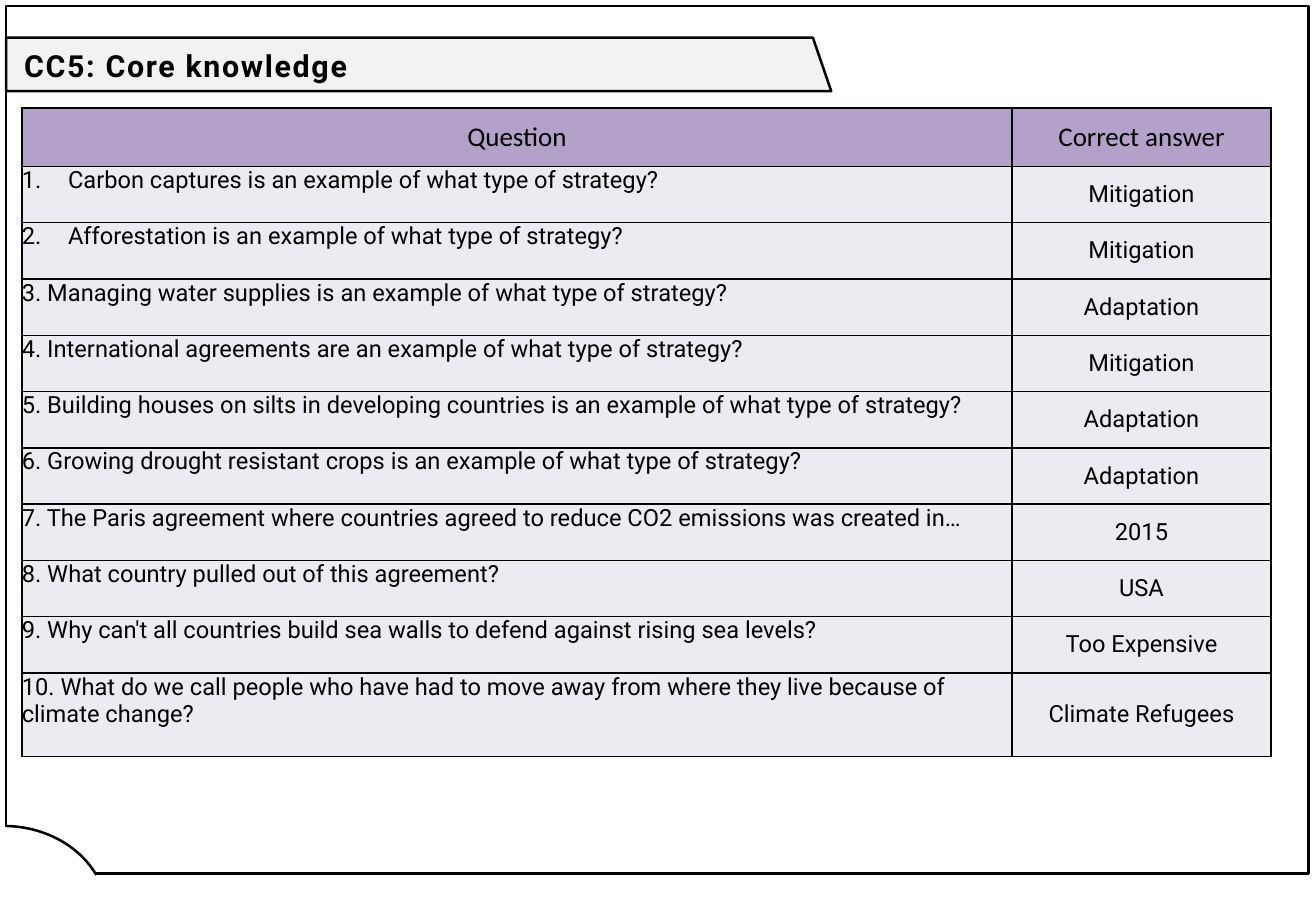
import pptx
import pptx.dml.color
import pptx.enum.shapes
import pptx.enum.text
import pptx.oxml
import pptx.oxml.ns
import pptx.util

WIDTH = pptx.util.Inches(10.83)
HEIGHT = pptx.util.Inches(7.5)
SHAPES = pptx.enum.shapes.MSO_SHAPE
ANCHOR = pptx.enum.text.MSO_ANCHOR
ALIGN = pptx.enum.text.PP_ALIGN

BLACK, WHITE, BANNER = "000000", "FFFFFF", "F2F2F2"
HEADER, BODY = "B4A1CA", "EDEAF1"

COLUMNS = (75.25, 19.67)
HEADER_ROW, QUESTION_ROW, LAST_ROW = 6.4, 6.18, 9.2
HEADINGS = ("Question", "Correct answer")
NUMBERED = 2
QUESTIONS = [
    ("Carbon captures is an example of what type of strategy?", "Mitigation"),
    ("Afforestation is an example of what type of strategy?", "Mitigation"),
    ("3. Managing water supplies is an example of what type of strategy?", "Adaptation"),
    ("4. International agreements are an example of what type of strategy?", "Mitigation"),
    ("5. Building houses on silts in developing countries is an example of what type of strategy?",
     "Adaptation"),
    ("6. Growing drought resistant crops is an example of what type of strategy?", "Adaptation"),
    ("7. The Paris agreement where countries agreed to reduce CO2 emissions was created in…",
     "2015"),
    ("8. What country pulled out of this agreement?", "USA"),
    ("9. Why can't all countries build sea walls to defend against rising sea levels?",
     "Too Expensive"),
    ("10. What do we call people who have had to move away from where they live "
     "because of climate change?", "Climate Refugees"),
]


def across(share):
    """Turn a percentage of the slide's width into a length."""
    return round(WIDTH * share / 100)


def down(share):
    """Turn a percentage of the slide's height into a length."""
    return round(HEIGHT * share / 100)


def place(left, top, width, height):
    """Turn four percentages into a position and a size."""
    return across(left), down(top), across(width), down(height)


def colour(code):
    """Make a colour from a hex string."""
    return pptx.dml.color.RGBColor.from_string(code)


def paint(target, code):
    """Fill a shape or a cell, or leave it empty when there is no code."""
    if code:
        target.fill.solid()
        target.fill.fore_color.rgb = colour(code)
    else:
        target.fill.background()


def finish(shape, fill=None, line=None):
    """Set the fill and outline of a shape and remove its shadow."""
    shape.shadow.inherit = False
    paint(shape, fill)
    if line:
        shape.line.color.rgb = colour(line)
        shape.line.width = pptx.util.Pt(1.5)
    else:
        shape.line.fill.background()


def add_xml(parent, markup):
    """Append a drawing element given as markup."""
    namespace = pptx.oxml.ns.nsdecls("a")
    parent.append(pptx.oxml.parse_xml(markup.replace(" ", f" {namespace} ", 1)))


def number(para, start):
    """Give a paragraph an automatic number with a hanging indent."""
    properties = para._p.get_or_add_pPr()
    indent = pptx.util.Inches(0.38)
    properties.set("marL", str(indent))
    properties.set("indent", str(-indent))
    add_xml(properties, f'<a:buAutoNum type="arabicPeriod" startAt="{start}"/>')


def write(frame, text, size=14, font="Roboto", bold=False, align=ALIGN.LEFT,
          spacing=None, line=None, after=None, start=None):
    """Write one formatted paragraph into a text frame."""
    frame.word_wrap = True
    para = frame.paragraphs[0]
    para.alignment = align
    if line:
        para.line_spacing = line
    if after:
        para.space_after = pptx.util.Pt(after)
    if start:
        number(para, start)
    span = para.add_run()
    span.text = text
    span.font.size = pptx.util.Pt(size)
    span.font.name = font
    span.font.bold = bold
    span.font.color.rgb = colour(BLACK)
    if spacing:
        span._r.get_or_add_rPr().set("spc", str(spacing * 100))


def add_preset(page, kind, area, fill=None, line=None):
    """Add a preset shape over an area given in percentages."""
    shape = page.shapes.add_shape(kind, *place(*area))
    finish(shape, fill, line)
    return shape


def add_banner(page):
    """Draw the slanted title banner."""
    corners = [(0.46, 4.13), (61.77, 4.13), (63.16, 10), (0.46, 10)]
    points = [(across(x), down(y)) for x, y in corners]
    builder = page.shapes.build_freeform(*points[0], scale=1)
    builder.add_line_segments(points[1:], close=True)
    finish(builder.convert_to_shape(), BANNER, BLACK)


def add_title(page):
    """Write the title on the banner."""
    box = page.shapes.add_textbox(*place(0.92, 2.8, 59.37, 8.4))
    box.text_frame.vertical_anchor = ANCHOR.MIDDLE
    write(box.text_frame, "CC5: Core knowledge", size=18, bold=True,
          spacing=1, line=1.07, after=8)


def fill_cell(cell, text, fill, anchor=ANCHOR.MIDDLE, **style):
    """Write a cell with no margins, black borders and a fill."""
    cell.margin_left = cell.margin_right = cell.margin_top = cell.margin_bottom = 0
    cell.vertical_anchor = anchor
    for side in "LRTB":
        add_xml(cell._tc.get_or_add_tcPr(),
                f'<a:ln{side} w="{pptx.util.Pt(1)}"><a:solidFill>'
                f'<a:srgbClr val="{BLACK}"/></a:solidFill></a:ln{side}>')
    paint(cell, fill)
    write(cell.text_frame, text, **style)


def add_quiz(page):
    """Build the table of questions and answers."""
    heights = [HEADER_ROW] + [QUESTION_ROW] * (len(QUESTIONS) - 1) + [LAST_ROW]
    area = place(1.66, 11.87, sum(COLUMNS), sum(heights))
    table = page.shapes.add_table(len(heights), len(COLUMNS), *area).table
    table.first_row = table.horz_banding = False
    for column, share in zip(table.columns, COLUMNS):
        column.width = across(share)
    for row, share in zip(table.rows, heights):
        row.height = down(share)
    for index, heading in enumerate(HEADINGS):
        fill_cell(table.cell(0, index), heading, HEADER,
                  size=16, font="Calibri", align=ALIGN.CENTER)
    for index, (question, answer) in enumerate(QUESTIONS, start=1):
        fill_cell(table.cell(index, 0), question, BODY, anchor=ANCHOR.TOP,
                  start=index if index <= NUMBERED else None)
        fill_cell(table.cell(index, 1), answer, BODY, align=ALIGN.CENTER)


def main():
    """Build the slide and save it."""
    deck = pptx.Presentation()
    deck.slide_width, deck.slide_height = WIDTH, HEIGHT
    page = deck.slides.add_slide(deck.slide_layouts[6])
    add_banner(page)
    add_preset(page, SHAPES.RECTANGLE, (0.46, 0.67, 98.98, 95.2), line=BLACK)
    corner = add_preset(page, SHAPES.ARC, (-7.57, 90.67, 15.7, 19.33), WHITE, BLACK)
    corner.adjustments[0] = 162.53
    corner.adjustments[1] = 202.27
    add_preset(page, SHAPES.RECTANGLE, (0.09, 90.8, 0.46, 1.33), WHITE)
    add_title(page)
    add_quiz(page)
    deck.save("out.pptx")


if __name__ == "__main__":
    main()
